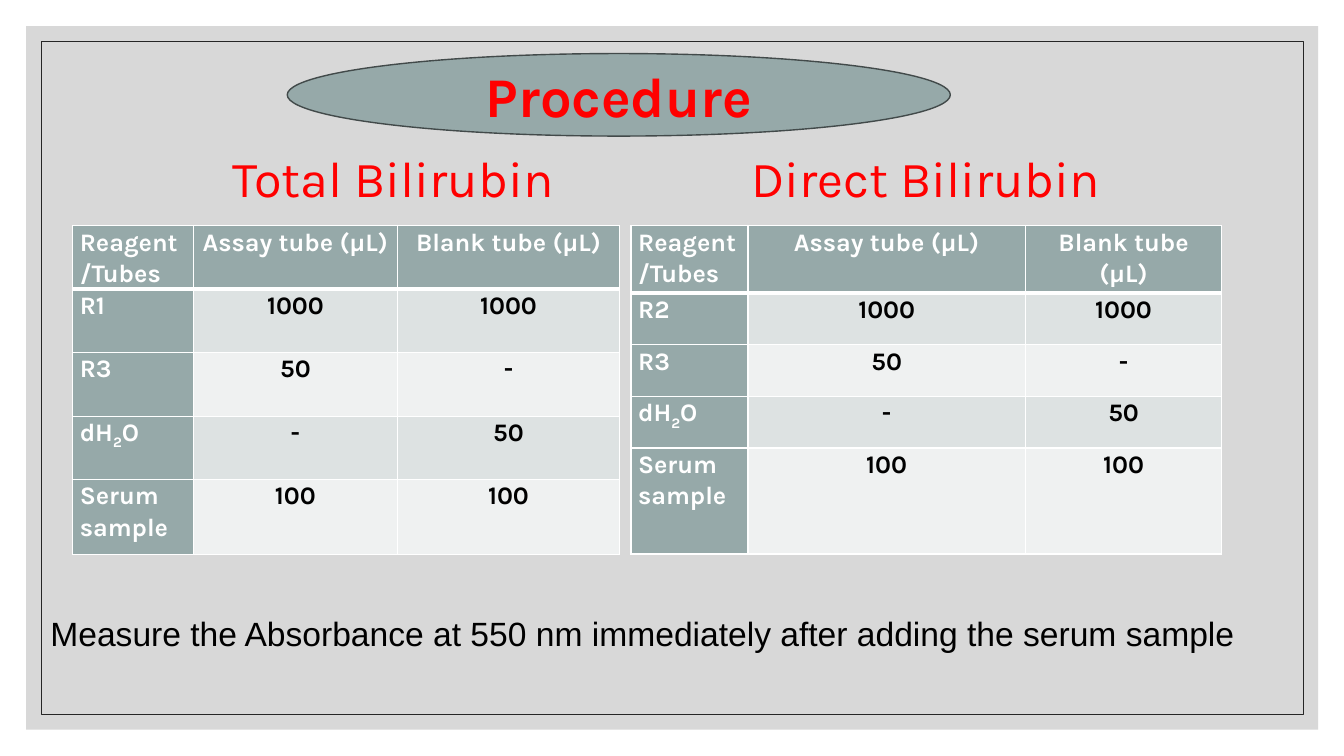
from dataclasses import dataclass

from pptx import Presentation
from pptx.dml.color import RGBColor as Rgb
from pptx.enum.shapes import MSO_SHAPE as Shape
from pptx.enum.text import MSO_ANCHOR as Anchor, PP_ALIGN as Align
from pptx.oxml.ns import qn
from pptx.util import Cm, Pt
from lxml.etree import SubElement


@dataclass(frozen=True)
class Theme:
    """Colours, typefaces and type sizes of the slide."""
    white: Rgb = Rgb.from_string("FFFFFF")
    black: Rgb = Rgb.from_string("000000")
    red: Rgb = Rgb.from_string("FF0000")
    panel: Rgb = Rgb.from_string("BFBFBF")
    frame: Rgb = Rgb.from_string("262626")
    sage: Rgb = Rgb.from_string("96A9A9")
    outline: Rgb = Rgb.from_string("424A4A")
    bands: tuple = (Rgb.from_string("DDE2E2"), Rgb.from_string("EFF1F1"))
    display: str = "Karla"
    body: str = "Arial"
    title_size: Pt = Pt(40)
    heading_size: Pt = Pt(36)
    note_size: Pt = Pt(24)
    cell_size: Pt = Pt(18)


THEME = Theme()
COLUMN_HEADS = ("Reagent/Tubes", "Assay tube (µL)", "Blank tube (µL)")
SHARED_STEPS = (("R3", "50", "-"), ("dH_2_O", "-", "50"), ("Serum sample", "100", "100"))


def assign(target, **values):
    """Set each given attribute on the target."""
    for name, value in values.items():
        setattr(target, name, value)


def write(paragraph, text, color, size, name=THEME.display, bold=False):
    """Write styled text, lowering the parts held between underscores."""
    for index, part in enumerate(text.split("_")):
        run = paragraph.add_run()
        run.text = part
        assign(run.font, name=name, size=size, bold=bold)
        run.font.color.rgb = color
        if index % 2:
            run._r.get_or_add_rPr().set("baseline", "-25000")


def add_figure(slide, kind, box, fill=None, opacity=100, line=None, width=0):
    """Add a preset shape with its fill and outline."""
    figure = slide.shapes.add_shape(kind, *map(Cm, box))
    figure.shadow.inherit = False
    if fill is None:
        figure.fill.background()
    else:
        figure.fill.solid()
        figure.fill.fore_color.rgb = fill
    if opacity < 100:
        tint = figure.element.spPr.find(".//" + qn("a:srgbClr"))
        SubElement(tint, qn("a:alpha")).set("val", str(opacity * 1000))
    if line is None:
        figure.line.fill.background()
    else:
        figure.line.color.rgb = line
        figure.line.width = Pt(width)
    return figure


def add_line_of_text(slide, box, text, inset=0.25, tab=None, **style):
    """Add a one-paragraph text box, with a tab stop where one is given."""
    frame = slide.shapes.add_textbox(*map(Cm, box)).text_frame
    assign(frame, word_wrap=True, margin_left=Cm(inset))
    paragraph = frame.paragraphs[0]
    if tab:
        stops = SubElement(paragraph._p.get_or_add_pPr(), qn("a:tabLst"))
        SubElement(stops, qn("a:tab"), pos=str(Cm(tab)), algn="l")
    write(paragraph, text, **style)


def rule_cell(cell, row):
    """Draw white cell borders, thicker below the header row."""
    properties = cell._tc.get_or_add_tcPr()
    for side in "LRTB":
        thick = (row, side) in ((0, "B"), (1, "T"))
        edge = SubElement(properties, qn("a:ln" + side), w=str(Pt(3 if thick else 1)))
        paint = SubElement(edge, qn("a:solidFill"))
        SubElement(paint, qn("a:srgbClr"), val=str(THEME.white))


def fill_cell(cell, row, column, text):
    """Style one cell by its place in the table and write its text."""
    labelled = row == 0 or column == 0
    assign(cell, margin_left=Cm(0.18), margin_right=Cm(0.18), margin_top=0, margin_bottom=0)
    rule_cell(cell, row)
    cell.fill.solid()
    cell.fill.fore_color.rgb = THEME.sage if labelled else THEME.bands[(row - 1) % 2]
    paragraph = cell.text_frame.paragraphs[0]
    assign(paragraph, alignment=Align.CENTER if column else Align.LEFT,
           line_spacing=1.07, space_after=Pt(8))
    write(paragraph, text, THEME.white if labelled else THEME.black, THEME.cell_size, bold=True)


def add_reagent_table(slide, left, widths, heights, first_reagent):
    """Add the volume table of one assay."""
    steps = (COLUMN_HEADS, (first_reagent, "1000", "1000"), *SHARED_STEPS)
    table = slide.shapes.add_table(len(steps), len(COLUMN_HEADS), Cm(left), Cm(5.69),
                                   Cm(sum(widths)), Cm(sum(heights))).table
    for column, width in zip(table.columns, widths):
        column.width = Cm(width)
    for row, height in zip(table.rows, heights):
        row.height = Cm(height)
    for row, step in enumerate(steps):
        for column, text in enumerate(step):
            fill_cell(table.cell(row, column), row, column, text)


def add_title(slide, text):
    """Add the slide title in an ellipse."""
    badge = add_figure(slide, Shape.OVAL, (7.24, 1.35, 16.71, 2.08),
                       fill=THEME.sage, line=THEME.outline, width=1)
    badge.text_frame.vertical_anchor = Anchor.MIDDLE
    heading = badge.text_frame.paragraphs[0]
    heading.alignment = Align.CENTER
    write(heading, text, THEME.red, THEME.title_size, bold=True)


def main():
    """Build the procedure slide and save it."""
    deck = Presentation()
    assign(deck, slide_width=Cm(33.87), slide_height=Cm(19.05))
    slide = deck.slides.add_slide(deck.slide_layouts[6])
    add_figure(slide, Shape.RECTANGLE, (0.66, 0.66, 32.56, 17.73), fill=THEME.panel, opacity=60)
    add_figure(slide, Shape.RECTANGLE, (1.04, 1.04, 31.8, 16.97), line=THEME.frame, width=0.5)
    add_reagent_table(slide, 1.83, (3.05, 5.13, 5.61), (1.55, 1.6, 1.6, 1.6, 1.88), "R1")
    add_reagent_table(slide, 15.9, (2.95, 6.99, 4.95), (1.7, 1.3, 1.3, 1.3, 2.67), "R2")
    add_line_of_text(slide, (4.75, 3.58, 23.47, 1.8), "Total Bilirubin\tDirect Bilirubin",
                     inset=1.12, tab=13.06, color=THEME.red, size=THEME.heading_size)
    add_line_of_text(slide, (1.02, 15.32, 31.85, 1.28),
                     "Measure the Absorbance at 550 nm immediately after adding the serum sample",
                     color=THEME.black, size=THEME.note_size, name=THEME.body)
    add_title(slide, "Procedure")
    deck.save("out.pptx")


if __name__ == "__main__":
    main()
